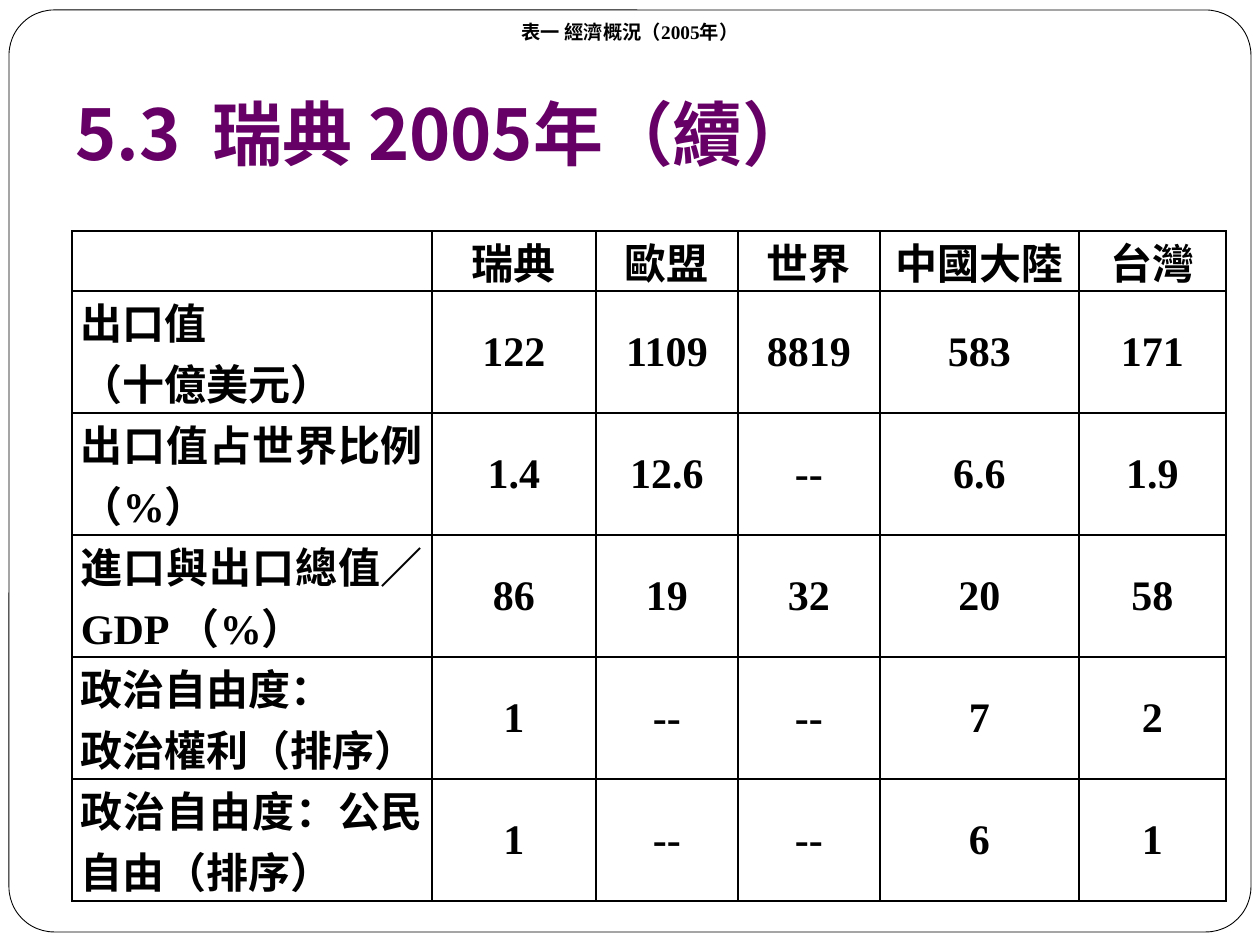
from lxml.etree import SubElement
from pptx import Presentation
from pptx.dml.color import RGBColor
from pptx.enum.shapes import MSO_SHAPE as Shape
from pptx.enum.text import MSO_ANCHOR as Anchor, PP_ALIGN as Align
from pptx.oxml import parse_xml
from pptx.oxml.ns import nsdecls, qn
from pptx.util import Pt

SCALE = 914400 // 126
BLACK = RGBColor(0, 0, 0)
WHITE = RGBColor(255, 255, 255)
PURPLE = RGBColor(0x66, 0, 0x66)
SANS = "Noto Sans CJK TC"
SERIF = "Times New Roman"
COLS = [360, 164, 142, 142, 199, 147]
HEAD, BODY = 60, 122
ROWS = [
    ("", "瑞典", "歐盟", "世界", "中國大陸", "台灣"),
    ("出口值\n（十億美元）", "122", "1109", "8819", "583", "171"),
    ("出口值占世界比例（%）", "1.4", "12.6", "--", "6.6", "1.9"),
    ("進口與出口總值／GDP （%）", "86", "19", "32", "20", "58"),
    ("政治自由度：\n政治權利（排序）", "1", "--", "--", "7", "2"),
    ("政治自由度：公民自由（排序）", "1", "--", "--", "6", "1"),
]


def px(*nums):
    return [num * SCALE for num in nums]


def add_run(para, text, size, face, color):
    run = para.add_run()
    run.text = text
    font = run.font
    font.size = Pt(size)
    font.bold = True
    font.color.rgb = color
    font.name = face
    SubElement(font._element, qn("a:ea")).set("typeface", SANS)


def fill_text(frame, text, size, face, color, align):
    for num, line in enumerate(text.split("\n")):
        para = frame.paragraphs[0] if num == 0 else frame.add_paragraph()
        para.alignment = align
        if line:
            add_run(para, line, size, face, color)


def add_frame(slide):
    frame = slide.shapes.add_shape(Shape.ROUNDED_RECTANGLE, *px(9, 10, 1242, 922))
    frame.adjustments[0] = 0.049
    frame.shadow.inherit = False
    frame.fill.solid()
    frame.fill.fore_color.rgb = WHITE
    frame.line.color.rgb = BLACK
    frame.line.width = Pt(0.5)


def add_text(slide, box, text, size, face, color, align, anchor, wrap):
    frame = slide.shapes.add_textbox(*px(*box)).text_frame
    frame.word_wrap = wrap
    frame.vertical_anchor = anchor
    fill_text(frame, text, size, face, color, align)
    return frame


def add_edges(cell):
    props = cell._tc.get_or_add_tcPr()
    for num, side in enumerate("LRTB"):
        props.insert(num, parse_xml(
            f'<a:ln{side} {nsdecls("a")} w="{Pt(1)}"><a:solidFill>'
            f'<a:srgbClr val="{BLACK}"/></a:solidFill></a:ln{side}>'))


def set_cell(cell, text, align, anchor):
    cell.margin_left, cell.margin_right = px(9, 9)
    cell.margin_top = cell.margin_bottom = 0
    cell.vertical_anchor = anchor
    cell.fill.background()
    fill_text(cell.text_frame, text, 24, SERIF, BLACK, align)
    add_edges(cell)


def add_grid(slide):
    highs = [HEAD] + [BODY] * (len(ROWS) - 1)
    box = px(72, 231, sum(COLS), sum(highs))
    table = slide.shapes.add_table(len(ROWS), len(COLS), *box).table
    table.first_row = table.horz_banding = False
    for col, wide in zip(table.columns, px(*COLS)):
        col.width = wide
    for row, high in zip(table.rows, px(*highs)):
        row.height = high
    for r, texts in enumerate(ROWS):
        for c, text in enumerate(texts):
            align = Align.CENTER if c else Align.JUSTIFY
            anchor = Anchor.MIDDLE if r and c else Anchor.TOP
            set_cell(table.cell(r, c), text, align, anchor)


def main():
    deck = Presentation()
    deck.slide_width, deck.slide_height = px(1260, 945)
    slide = deck.slides.add_slide(deck.slide_layouts[6])
    add_frame(slide)
    title = add_text(slide, (63, 63, 1134, 125), "5.3  瑞典 2005年（續）", 40,
                     SANS, PURPLE, Align.LEFT, Anchor.BOTTOM, True)
    title.margin_bottom = px(13)[0]
    add_grid(slide)
    add_text(slide, (0, 0, 1260, 63), "表一 經濟概況（2005年）", 11,
             SERIF, BLACK, Align.CENTER, Anchor.MIDDLE, False)
    deck.save("out.pptx")


if __name__ == "__main__":
    main()
